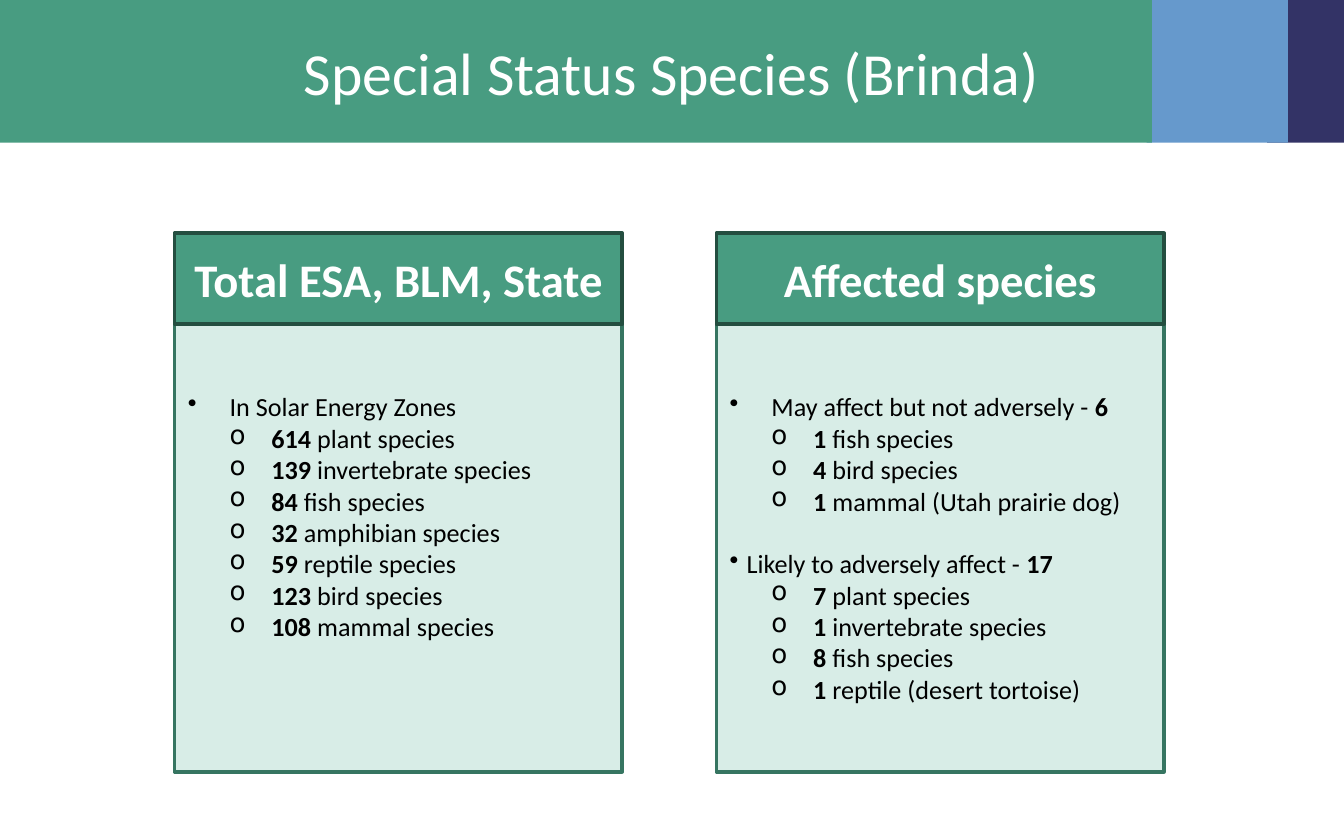
from lxml.etree import SubElement
from pptx import Presentation
from pptx.dml.color import RGBColor
from pptx.enum.shapes import MSO_SHAPE
from pptx.enum.text import MSO_ANCHOR, PP_ALIGN
from pptx.oxml.ns import qn
from pptx.util import Cm, Pt

FONT = "Calibri"
GREEN = "489C81"
WHITE = "FFFFFF"
BANDS = [(23.95, 1.47, "333366"), (21.67, 2.67, "6699CC"), (0, 21.77, GREEN)]
CARD_LEFT, CARD_STEP, CARD_WIDTH = 3.3, 10.24, 8.46
HEADER_TOP, HEADER_HEIGHT, BODY_HEIGHT = 4.41, 1.72, 8.46
INDENT, NARROW_INDENT = 0.79, 0.32
LINE_HEIGHT = 16.8

CARDS = [
    ("Total ESA, BLM, State", [
        (("In Solar Energy Zones", ""), INDENT, [
            ("614", " plant species"),
            ("139", " invertebrate species"),
            ("84", " fish species"),
            ("32", " amphibian species"),
            ("59", " reptile species"),
            ("123", " bird species"),
            ("108", " mammal species"),
        ]),
    ]),
    ("Affected species", [
        (("May affect but not adversely - ", "6"), INDENT, [
            ("1", " fish species"),
            ("4", " bird species"),
            ("1", " mammal (Utah prairie dog)"),
        ]),
        (("Likely to adversely affect - ", "17"), NARROW_INDENT, [
            ("7", " plant species"),
            ("1", " invertebrate species"),
            ("8", " fish species"),
            ("1", " reptile (desert tortoise)"),
        ]),
    ]),
]


def color(value):
    """Turn a hex string into a colour."""
    return RGBColor.from_string(value)


def add_rectangle(slide, left, top, width, height, fill, line=None):
    """Add a flat rectangle with an optional outline."""
    shape = slide.shapes.add_shape(
        MSO_SHAPE.RECTANGLE, Cm(left), Cm(top), Cm(width), Cm(height))
    shape.shadow.inherit = False
    shape.fill.solid()
    shape.fill.fore_color.rgb = color(fill)
    if line:
        shape.line.color.rgb = color(line)
        shape.line.width = Pt(2)
    else:
        shape.line.fill.background()
    return shape


def add_run(paragraph, text, size, text_color, bold=False):
    """Append one formatted run."""
    run = paragraph.add_run()
    run.text = text
    run.font.name = FONT
    run.font.size = Pt(size)
    run.font.bold = bold
    run.font.color.rgb = color(text_color)


def set_heading(shape, text, size, bold=False):
    """Write a centred white heading into a shape."""
    frame = shape.text_frame
    frame.word_wrap = True
    frame.vertical_anchor = MSO_ANCHOR.MIDDLE
    paragraph = frame.paragraphs[0]
    paragraph.alignment = PP_ALIGN.CENTER
    add_run(paragraph, text, size, WHITE, bold)


def add_bullet(paragraph, character, margin, hanging, level=0):
    """Give a paragraph a bullet and a hanging indent."""
    paragraph.level = level
    paragraph.alignment = PP_ALIGN.LEFT
    paragraph.line_spacing = Pt(LINE_HEIGHT)
    properties = paragraph._p.get_or_add_pPr()
    properties.set("marL", str(Cm(margin)))
    properties.set("indent", str(-Cm(hanging)))
    SubElement(properties, qn("a:buChar")).set("char", character)


def fill_body(shape, groups):
    """Write the groups of species counts into a card body."""
    frame = shape.text_frame
    frame.word_wrap = True
    frame.vertical_anchor = MSO_ANCHOR.TOP
    frame.margin_top = Cm(1.26)
    for index, ((label, total), indent, counts) in enumerate(groups):
        paragraph = frame.add_paragraph() if index else frame.paragraphs[0]
        add_bullet(paragraph, "•", indent, indent)
        if index:
            paragraph.space_before = Pt(LINE_HEIGHT)
        add_run(paragraph, label, 14, "000000")
        if total:
            add_run(paragraph, total, 14, "000000", bold=True)
        for number, species in counts:
            paragraph = frame.add_paragraph()
            add_bullet(paragraph, "o", 2 * INDENT, INDENT, level=1)
            add_run(paragraph, number, 14, "000000", bold=True)
            add_run(paragraph, species, 14, "000000")


def add_card(slide, left, heading, groups):
    """Add a card with a header bar above its body."""
    body = add_rectangle(slide, left, HEADER_TOP + HEADER_HEIGHT,
                         CARD_WIDTH, BODY_HEIGHT, "D8EDE7", "367561")
    fill_body(body, groups)
    header = add_rectangle(slide, left, HEADER_TOP, CARD_WIDTH,
                           HEADER_HEIGHT, GREEN, "244E40")
    set_heading(header, heading, 25, bold=True)


def main():
    """Build and save the slide."""
    presentation = Presentation()
    presentation.slide_width = Cm(25.4)
    presentation.slide_height = Cm(15.88)
    slide = presentation.slides.add_slide(presentation.slide_layouts[6])
    for left, width, fill in BANDS:
        add_rectangle(slide, left, 0, width, 2.7, fill)
    title = slide.shapes.add_textbox(Cm(1.27), Cm(0.3), Cm(22.86), Cm(2.1))
    set_heading(title, "Special Status Species (Brinda)", 32)
    for index, (heading, groups) in enumerate(CARDS):
        add_card(slide, CARD_LEFT + index * CARD_STEP, heading, groups)
    presentation.save("out.pptx")


if __name__ == "__main__":
    main()
